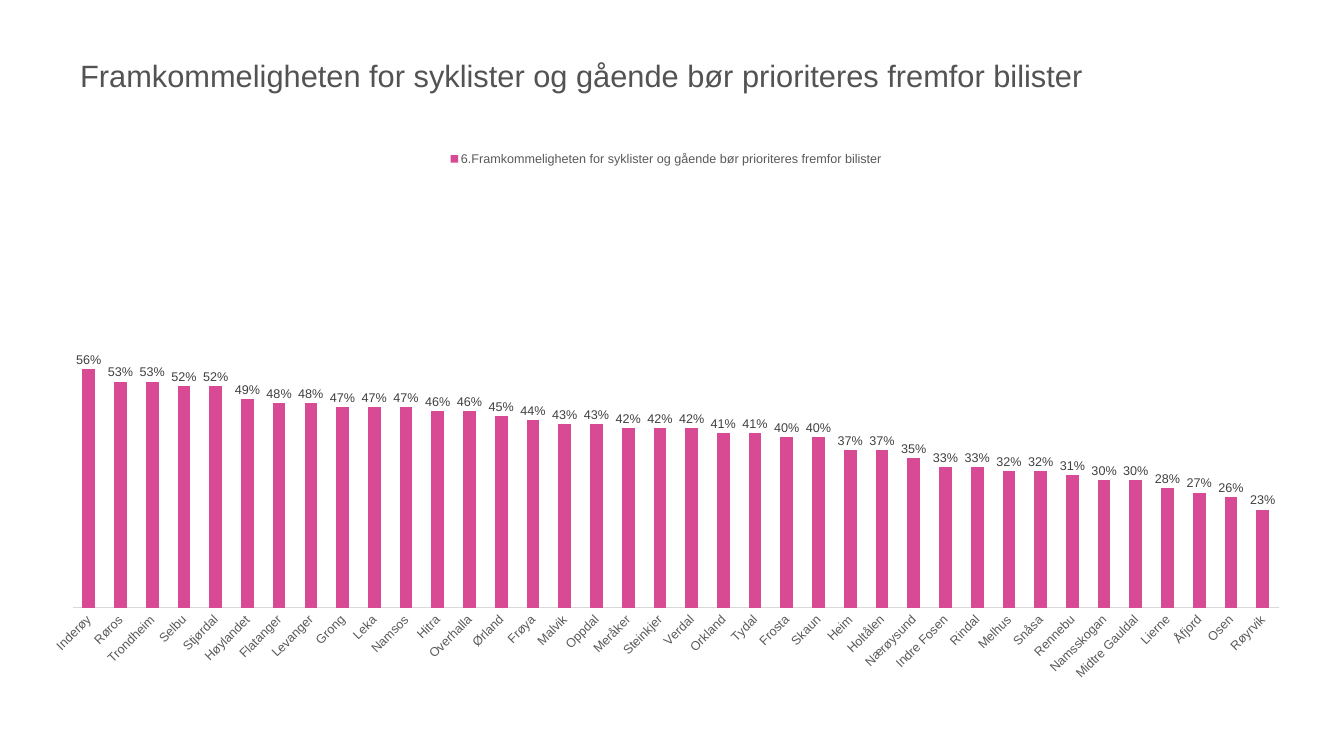
from typing import NamedTuple

from pptx import Presentation
from pptx.chart.data import CategoryChartData
from pptx.dml.color import RGBColor
from pptx.enum.chart import (
    XL_CHART_TYPE, XL_LABEL_POSITION, XL_LEGEND_POSITION, XL_TICK_LABEL_POSITION, XL_TICK_MARK,
)
from pptx.enum.text import MSO_ANCHOR
from pptx.oxml import parse_xml
from pptx.oxml.ns import nsdecls, qn
from pptx.util import Inches, Pt

COLUMNS = XL_CHART_TYPE.COLUMN_CLUSTERED
OUTSIDE_END = XL_LABEL_POSITION.OUTSIDE_END
LEGEND_TOP = XL_LEGEND_POSITION.TOP
LABELS_LOW = XL_TICK_LABEL_POSITION.LOW
NO_TICK = XL_TICK_MARK.NONE
MIDDLE = MSO_ANCHOR.MIDDLE

FONT = "Arial"
CHART_SIZE = 18
COLORS = {
    "title": "535353", "bar": "D94A94", "value": "404040",
    "label": "595959", "axis": "D9D9D9", "text": "000000",
}
TITLE = "Framkommeligheten for syklister og gående bør prioriteres fremfor bilister"


class Municipality(NamedTuple):
    name: str
    percent: int


MUNICIPALITIES = [
    Municipality("Inderøy", 56), Municipality("Røros", 53),
    Municipality("Trondheim", 53), Municipality("Selbu", 52),
    Municipality("Stjørdal", 52), Municipality("Høylandet", 49),
    Municipality("Flatanger", 48), Municipality("Levanger", 48),
    Municipality("Grong", 47), Municipality("Leka", 47),
    Municipality("Namsos", 47), Municipality("Hitra", 46),
    Municipality("Overhalla", 46), Municipality("Ørland", 45),
    Municipality("Frøya", 44), Municipality("Malvik", 43),
    Municipality("Oppdal", 43), Municipality("Meråker", 42),
    Municipality("Steinkjer", 42), Municipality("Verdal", 42),
    Municipality("Orkland", 41), Municipality("Tydal", 41),
    Municipality("Frosta", 40), Municipality("Skaun", 40),
    Municipality("Heim", 37), Municipality("Holtålen", 37),
    Municipality("Nærøysund", 35), Municipality("Indre Fosen", 33),
    Municipality("Rindal", 33), Municipality("Melhus", 32),
    Municipality("Snåsa", 32), Municipality("Rennebu", 31),
    Municipality("Namsskogan", 30), Municipality("Midtre Gauldal", 30),
    Municipality("Lierne", 28), Municipality("Åfjord", 27),
    Municipality("Osen", 26), Municipality("Røyrvik", 23),
]


def style_font(font, size: float, color: str) -> None:
    font.name = FONT
    font.size = Pt(size)
    font.bold = False
    font.color.rgb = RGBColor.from_string(COLORS[color])


def add_title(page) -> None:
    box = page.shapes.add_textbox(Inches(1.53), Inches(0.47), Inches(24.58), Inches(2.04))
    frame = box.text_frame
    frame.word_wrap = True
    frame.vertical_anchor = MIDDLE
    frame.margin_left = frame.margin_right = Inches(0.06)
    frame.margin_top = frame.margin_bottom = Inches(0.06)
    frame.text = TITLE
    style_font(frame.paragraphs[0].runs[0].font, 44, "title")


def place_plot(chart, left: float, top: float, width: float, height: float) -> None:
    """Fix the inner plot area, in fractions of the chart."""
    plot_area = chart.plots[0]._element.getparent()
    for layout in plot_area.findall(qn("c:layout")):
        plot_area.remove(layout)
    sizes = "".join(
        f'<c:{tag} val="{value}"/>'
        for tag, value in zip("xywh", (left, top, width, height))
    )
    plot_area.insert(0, parse_xml(
        f'<c:layout {nsdecls("c")}><c:manualLayout><c:layoutTarget val="inner"/>'
        f'<c:xMode val="edge"/><c:yMode val="edge"/>{sizes}</c:manualLayout></c:layout>'
    ))


def style_axes(chart) -> None:
    names = chart.category_axis
    names.major_tick_mark = names.minor_tick_mark = NO_TICK
    names.tick_label_position = LABELS_LOW
    names.format.line.color.rgb = RGBColor.from_string(COLORS["axis"])
    names.format.line.width = Pt(0.75)
    style_font(names.tick_labels.font, CHART_SIZE, "label")
    names._element.txPr.find(qn("a:bodyPr")).set("rot", "-2700000")

    shares = chart.value_axis
    shares.minimum_scale, shares.maximum_scale = 0, 1
    shares.has_major_gridlines = False
    shares.tick_labels.number_format = "0%"
    shares.tick_labels.number_format_is_linked = False
    shares.visible = False


def add_share_chart(page) -> None:
    data = CategoryChartData(number_format="0%")
    data.categories = [place.name for place in MUNICIPALITIES]
    data.add_series(f"6.{TITLE}", [place.percent / 100 for place in MUNICIPALITIES])
    chart = page.shapes.add_chart(
        COLUMNS, Inches(0.56), Inches(2.89), Inches(25.32), Inches(10.8), data
    ).chart
    style_font(chart.font, CHART_SIZE, "text")
    chart.has_title = False
    chart.has_legend = True
    chart.legend.position = LEGEND_TOP
    chart.legend.include_in_layout = False
    style_font(chart.legend.font, CHART_SIZE, "label")

    plot = chart.plots[0]
    plot.vary_by_categories = False
    plot.gap_width = 150
    plot.overlap = -25
    bars = plot.series[0]
    bars.format.fill.solid()
    bars.format.fill.fore_color.rgb = RGBColor.from_string(COLORS["bar"])
    labels = bars.data_labels
    labels.show_value = True
    labels.position = OUTSIDE_END
    labels.number_format = "0%"
    labels.number_format_is_linked = False
    style_font(labels.font, CHART_SIZE, "value")

    style_axes(chart)
    place_plot(chart, 0.035, 0.065, 0.945, 0.784)


def main() -> None:
    deck = Presentation()
    deck.slide_width, deck.slide_height = Inches(26.67), Inches(15)
    page = deck.slides.add_slide(deck.slide_layouts[6])
    add_title(page)
    add_share_chart(page)
    deck.save("out.pptx")


if __name__ == "__main__":
    main()
